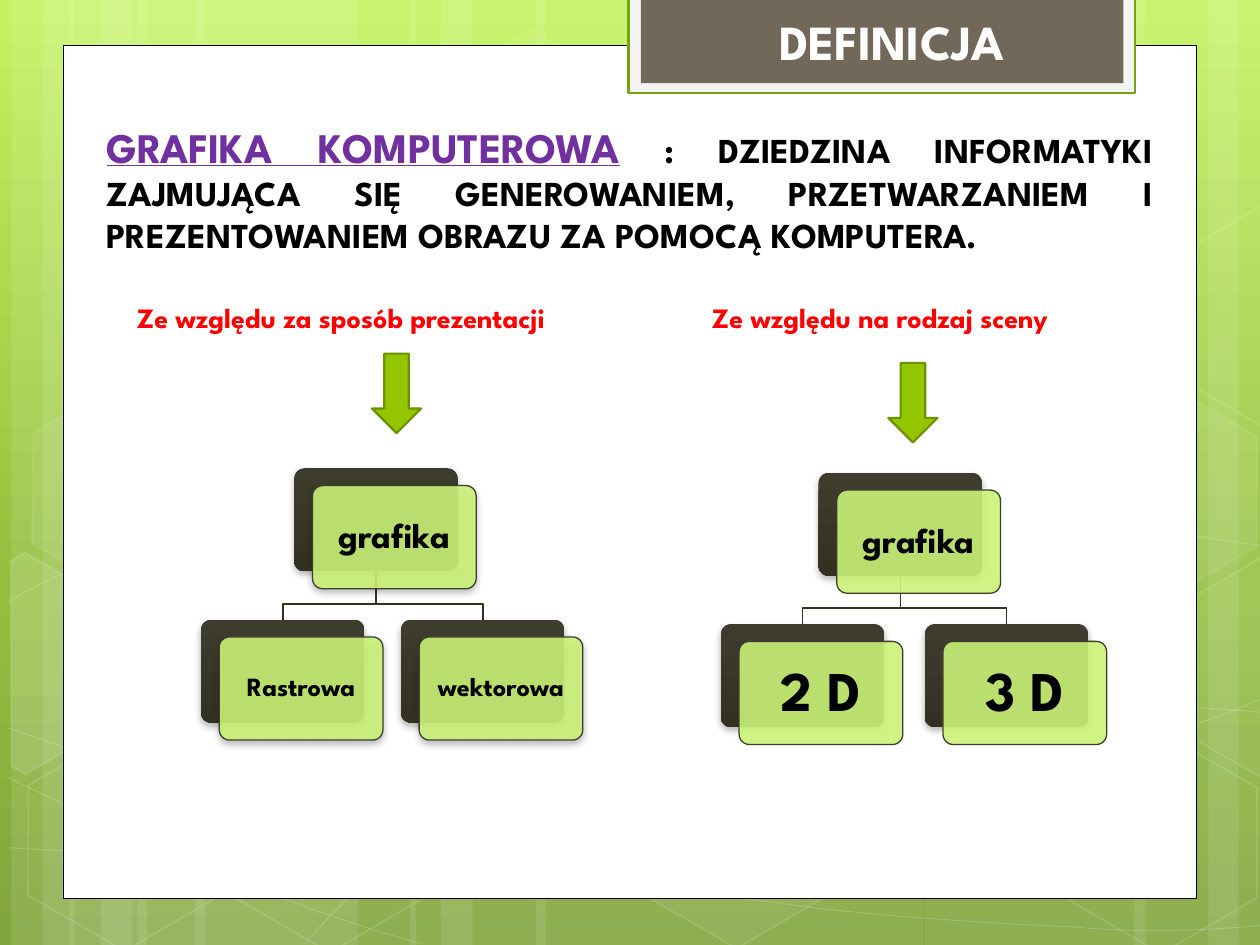
from lxml.etree import SubElement
from pptx import Presentation
from pptx.dml.color import RGBColor
from pptx.enum.shapes import MSO_SHAPE
from pptx.enum.text import MSO_ANCHOR, PP_ALIGN
from pptx.oxml.ns import qn
from pptx.util import Cm, Pt

FONT = "League Spartan"
WIDTH, HEIGHT = 25.4, 19.05
BACKGROUND = [(0, "C3F35F"), (62, "93BF3F"), (100, "81A53E")]
DARK_CARD = [(0, "3E3D2D"), (100, "333222")]

STRIPES = [
    (2.77, 4.45), (0.23, 1.27), (0.86, 2.11), (3.94, 4.45), (1.4, 1.27), (2.03, 2.11),
    (18.64, 4.45), (24.36, 1.27), (22.86, 2.11), (10.8, 7.82), (8.26, 1.27), (8.89, 2.11),
]
CURVES = [
    [(0.18, 17.09), (1.55, 17.17), (2.92, 17.25), (4.83, 17.22), (6.73, 17.2), (9.09, 17.15),
     (11.63, 16.89), (14.17, 16.64), (17.78, 16.15), (20.12, 15.67), (22.45, 15.19),
     (24.82, 14.43), (25.58, 14)],
    [(0.18, 12.12), (0.91, 11.71), (1.65, 11.33), (3.07, 10.95), (4.52, 10.57), (6.58, 10.01),
     (8.81, 9.83), (11.07, 9.65), (13.82, 9.63), (16.61, 9.83), (19.41, 10.03),
     (24.05, 10.82), (25.58, 11.02)],
    [(0.15, 15.67), (3.07, 17.07), (6.27, 18.47), (8.51, 19.02)],
    [(0.18, 14.68), (0.97, 14.96), (1.78, 15.24), (3.25, 15.65), (4.72, 16.03), (6.93, 16.66),
     (9.07, 17.09), (11.18, 17.53), (13.84, 17.98), (15.95, 18.24), (18.06, 18.52),
     (20.32, 18.62), (21.67, 18.69), (23.01, 18.8), (23.34, 18.75), (24, 18.75),
     (24.66, 18.72), (25.12, 18.69), (25.58, 18.64)],
    [(6.15, 19.02), (6.6, 18.52), (7.06, 18.01), (7.67, 17.55), (8.28, 17.07), (9.14, 16.59),
     (9.86, 16.23), (10.57, 15.88), (11, 15.72), (11.91, 15.47), (12.95, 15.21),
     (14.55, 14.86), (15.44, 14.68), (16.36, 14.5), (16.48, 14.5), (17.27, 14.45),
     (18.06, 14.38), (19.3, 14.3), (20.17, 14.27), (21.06, 14.25), (22.5, 14.27),
     (22.5, 14.27), (23, 14.27), (23.6, 14.27), (24.21, 14.27), (24.66, 14.3),
     (25.1, 14.33), (25.32, 14.35), (25.55, 14.38), (25.48, 14.35), (25.55, 14.38)],
]
HEXAGONS = [
    (8.48, 0.91, 4, 8), (12.62, 14.96, 6, 12), (0.28, 15.01, 0, 12), (0.36, 7.92, 7, 8),
    (4.42, 15.04, 0, 12), (19.13, 11.51, 10, 12), (21.18, 15.06, 0, 12), (21.18, 7.98, 7, 8),
]
LEFT_CUT = [(0, 0.29), (0.15, 0), (2.42, 0), (3.5, 1.94), (2.41, 3.86), (2.08, 3.86)]
RIGHT_CUT = [(0, 1.93), (1.11, 0), (1.34, 0), (3.45, 3.75), (3.35, 3.86), (1.11, 3.86)]
CUT_HEXAGONS = [(LEFT_CUT, -0.84, 11.68, 10), (RIGHT_CUT, 23.29, 11.28, 4),
                (RIGHT_CUT, 23.29, 4.19, 0)]

TITLE = "DEFINICJA"
TERM = "GRAFIKA KOMPUTEROWA"
DEFINITION = (": DZIEDZINA INFORMATYKI ZAJMUJĄCA SIĘ GENEROWANIEM, PRZETWARZANIEM "
              "I PREZENTOWANIEM OBRAZU ZA POMOCĄ KOMPUTERA.")
TREES = [
    {"heading": "Ze względu za sposób prezentacji", "heading_box": (2.51, 5.93, 10.01, 0.94),
     "arrow": (7.5, 7.13), "root": ("grafika", 5.93, 9.44),
     "children": [("Rastrowa", 4.05), ("wektorowa", 8.08)],
     "size": 15, "inset": 0.15, "line_width": 1.25, "front_shadow": True},
    {"heading": "Ze względu na rodzaj sceny", "heading_box": (14.1, 5.93, 8.41, 0.94),
     "arrow": (17.91, 7.32), "root": ("grafika", 16.5, 9.53),
     "children": [("2 D", 14.53), ("3 D", 18.64)],
     "size": 32, "inset": 0.33, "line_width": 0.75, "front_shadow": False},
]
CARD_WIDTH, CARD_HEIGHT = 3.3, 2.08
FRONT_X, FRONT_Y = 0.37, 0.35
LEVEL_STEP = 3.05
ELBOW_DROP = 0.65


def color(value):
    return RGBColor.from_string(value)


def set_alpha(parent, percent):
    for element in list(parent.iter(qn("a:srgbClr"))):
        SubElement(element, qn("a:alpha"), val=str(percent * 1000))


def set_gradient(fill, owner, stops):
    fill.gradient()
    fill.gradient_angle = 270
    stop_list = next(owner.iter(qn("a:gsLst")))
    for stop in list(stop_list):
        stop_list.remove(stop)
    for position, value in stops:
        stop = SubElement(stop_list, qn("a:gs"), pos=str(position * 1000))
        SubElement(stop, qn("a:srgbClr"), val=value)


def paint(shape, fill=None, fill_alpha=100, line=None, line_width=1, line_alpha=100, shadow=False):
    properties = shape._element.spPr
    shape.shadow.inherit = False
    if isinstance(fill, list):
        set_gradient(shape.fill, properties, fill)
    elif fill and fill_alpha:
        shape.fill.solid()
        shape.fill.fore_color.rgb = color(fill)
        if fill_alpha < 100:
            set_alpha(properties.find(qn("a:solidFill")), fill_alpha)
    else:
        shape.fill.background()
    if line:
        shape.line.color.rgb = color(line)
        shape.line.width = Pt(line_width)
        if line_alpha < 100:
            set_alpha(properties.find(qn("a:ln")), line_alpha)
    else:
        shape.line.fill.background()
    if shadow:
        outer = SubElement(properties.find(qn("a:effectLst")), qn("a:outerShdw"),
                           blurRad=str(Pt(4)), dist=str(Pt(2)), dir="5400000", rotWithShape="0")
        SubElement(outer, qn("a:srgbClr"), val="000000")
        set_alpha(outer, 28)


def add_box(slide, kind, box, **look):
    shape = slide.shapes.add_shape(kind, *(Cm(value) for value in box))
    paint(shape, **look)
    return shape


def add_outline(slide, points, close=False, **look):
    corners = [(Cm(x), Cm(y)) for x, y in points]
    builder = slide.shapes.build_freeform(*corners[0])
    builder.add_line_segments(corners[1:], close=close)
    shape = builder.convert_to_shape()
    paint(shape, **look)
    return shape


def bend_segments(shape):
    segments = list(shape._element.iter(qn("a:lnTo")))
    outline = segments[0].getparent()
    for start in range(0, len(segments), 3):
        curve = SubElement(outline, qn("a:cubicBezTo"))
        for segment in segments[start:start + 3]:
            curve.append(segment[0])
            outline.remove(segment)


def add_text_frame(slide, box):
    frame = slide.shapes.add_textbox(*(Cm(value) for value in box)).text_frame
    frame.word_wrap = True
    return frame


def write(frame, text, size=20, ink="000000", underline=False, align=PP_ALIGN.LEFT):
    paragraph = frame.paragraphs[0]
    paragraph.alignment = align
    run = paragraph.add_run()
    run.text = text
    run.font.name = FONT
    run.font.size = Pt(size)
    run.font.bold = True
    run.font.underline = underline
    run.font.color.rgb = color(ink)


def add_card(slide, label, left, top, size, inset, front_shadow):
    add_box(slide, MSO_SHAPE.ROUNDED_RECTANGLE, (left, top, CARD_WIDTH, CARD_HEIGHT),
            fill=DARK_CARD, shadow=True).adjustments[0] = 0.1
    front = add_box(slide, MSO_SHAPE.ROUNDED_RECTANGLE,
                    (left + FRONT_X, top + FRONT_Y, CARD_WIDTH, CARD_HEIGHT),
                    fill="CAF278", fill_alpha=90, line="3E3D2D", line_width=0.75,
                    shadow=front_shadow)
    front.adjustments[0] = 0.1
    frame = front.text_frame
    frame.word_wrap = True
    frame.vertical_anchor = MSO_ANCHOR.MIDDLE
    frame.margin_left = frame.margin_right = frame.margin_top = frame.margin_bottom = Cm(inset)
    write(frame, label, size=size, align=PP_ALIGN.CENTER)
    frame.paragraphs[0].line_spacing = 0.9


def add_tree(slide, tree):
    label, left, top = tree["root"]
    child_top = top + LEVEL_STEP
    middle, bottom = left + CARD_WIDTH / 2, top + CARD_HEIGHT
    for _, child_left in tree["children"]:
        child_middle = child_left + CARD_WIDTH / 2
        add_outline(slide, [(middle, bottom), (middle, bottom + ELBOW_DROP),
                            (child_middle, bottom + ELBOW_DROP), (child_middle, child_top)],
                    line="323124", line_width=tree["line_width"])
    add_card(slide, label, left, top, 20, 0.2, tree["front_shadow"])
    for child_label, child_left in tree["children"]:
        add_card(slide, child_label, child_left, child_top, tree["size"], tree["inset"],
                 tree["front_shadow"])
    write(add_text_frame(slide, tree["heading_box"]), tree["heading"], size=16, ink="FF0000")
    add_box(slide, MSO_SHAPE.DOWN_ARROW, (*tree["arrow"], 0.99, 1.6),
            fill="94C600", line="6D9200", line_width=1.25)


def add_backdrop(slide):
    set_gradient(slide.background.fill, slide._element, BACKGROUND)
    for left, width in STRIPES:
        add_box(slide, MSO_SHAPE.RECTANGLE, (left, 0, width, HEIGHT), fill="FFFFFF", fill_alpha=10)
    for points in CURVES:
        bend_segments(add_outline(slide, points, line="FFFFFF", line_width=0.5, line_alpha=20))
    for left, top, fill_alpha, line_alpha in HEXAGONS:
        hexagon = add_box(slide, MSO_SHAPE.HEXAGON, (left, top, 4.45, 3.86), fill="FFFFFF",
                          fill_alpha=fill_alpha, line="FFFFFF", line_alpha=line_alpha)
        hexagon.adjustments[0] = 0.285
        hexagon.rotation = 30
    for points, left, top, fill_alpha in CUT_HEXAGONS:
        add_outline(slide, [(left + x, top + y) for x, y in points], close=True, fill="FFFFFF",
                    fill_alpha=fill_alpha, line="FFFFFF", line_alpha=12).rotation = 30
    add_box(slide, MSO_SHAPE.RECTANGLE, (1.27, 0.91, 22.86, 17.2),
            fill="FFFFFF", line="000000", line_width=0.5)
    add_box(slide, MSO_SHAPE.RECTANGLE, (12.67, -0.05, 10.22, 1.92),
            fill="F5F5F5", line="74A510", line_width=1.25)
    add_box(slide, MSO_SHAPE.RECTANGLE, (12.92, -0.05, 9.73, 1.73), fill="71685A")


def main():
    presentation = Presentation()
    presentation.slide_width, presentation.slide_height = Cm(WIDTH), Cm(HEIGHT)
    slide = presentation.slides.add_slide(presentation.slide_layouts[6])
    add_backdrop(slide)
    title = add_text_frame(slide, (14.58, 0.32, 5.92, 1.02))
    title.vertical_anchor = MSO_ANCHOR.MIDDLE
    write(title, TITLE, size=28, ink="FEFEFE", align=PP_ALIGN.RIGHT)
    body = add_text_frame(slide, (1.9, 2.32, 21.59, 3))
    write(body, TERM, size=24, ink="7030A0", underline=True, align=PP_ALIGN.JUSTIFY)
    write(body, " " + DEFINITION, align=PP_ALIGN.JUSTIFY)
    for tree in TREES:
        add_tree(slide, tree)
    presentation.save("out.pptx")


if __name__ == "__main__":
    main()
